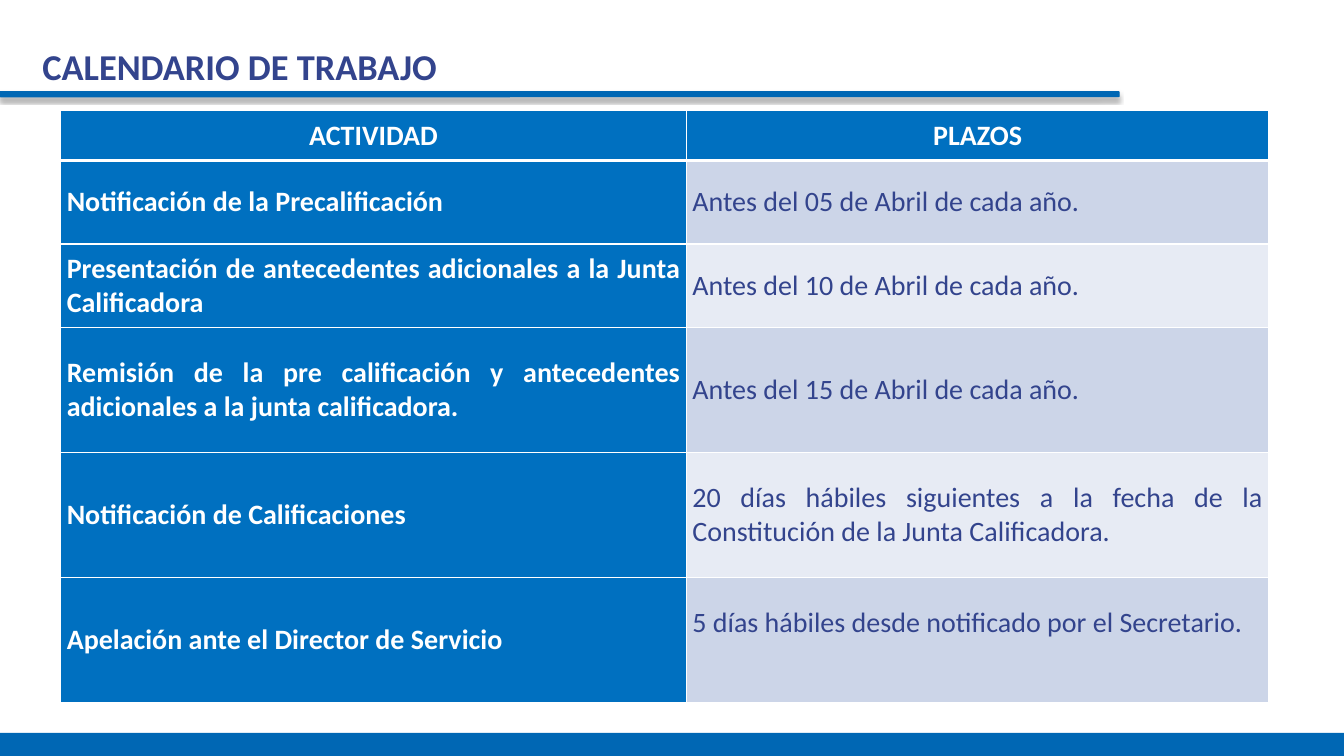
from dataclasses import dataclass

from lxml import etree
from pptx import Presentation
from pptx import util as u
from pptx.dml.color import RGBColor
from pptx.enum import shapes, text
from pptx.oxml import ns


@dataclass(frozen=True)
class Theme:
    font: str = "Calibri"
    title_size: int = 26
    cell_size: int = 20
    bar: str = "0067B4"
    head: str = "0070C0"
    ink: str = "33448D"
    white: str = "FFFFFF"
    bands: tuple = ("CCD5E8", "E7EBF4")


def child(parent, tag, **attributes):
    return etree.SubElement(parent, ns.qn(tag), attributes)


class CalendarSlide:
    """Lengths are percentages of the slide's width (x) and height (y)."""

    def __init__(self, deck, theme):
        self.deck, self.theme = deck, theme
        self.page = deck.slides.add_slide(deck.slide_layouts[5])

    def x(self, share):
        return round(self.deck.slide_width * share / 100)

    def y(self, share):
        return round(self.deck.slide_height * share / 100)

    def frame(self, left, top, width, height):
        return self.x(left), self.y(top), self.x(width), self.y(height)

    def style(self, para, size, color, bold, align):
        para.alignment = align
        font = para.font
        font.name, font.size, font.bold = self.theme.font, u.Pt(size), bold
        font.color.rgb = RGBColor.from_string(color)

    def title(self, words, *area):
        box = self.page.shapes.title
        box.left, box.top, box.width, box.height = self.frame(*area)
        body = box.text_frame
        body.text = words
        body.margin_left = body.margin_right = body.margin_top = body.margin_bottom = 0
        body.vertical_anchor = text.MSO_ANCHOR.MIDDLE
        body.auto_size = text.MSO_AUTO_SIZE.NONE
        self.style(body.paragraphs[0], self.theme.title_size, self.theme.ink,
                   True, text.PP_ALIGN.LEFT)

    def bar(self, kind, *area):
        bar = self.page.shapes.add_shape(kind, *self.frame(*area))
        bar.shadow.inherit = False
        bar.fill.solid()
        bar.fill.fore_color.rgb = RGBColor.from_string(self.theme.bar)
        bar.line.fill.background()
        return bar

    def rule(self, *area):
        rule = self.bar(shapes.MSO_SHAPE.ROUNDED_RECTANGLE, *area)
        rule.adjustments[0] = 0.12
        rule.line.color.rgb = RGBColor.from_string(self.theme.bar)
        rule.line.width = u.Pt(0.75)
        effects = rule._element.spPr.find(ns.qn("a:effectLst"))
        shadow = child(effects, "a:outerShdw", blurRad=str(u.Pt(3.1)),
                       dist=str(u.Pt(1.8)), dir="5400000", rotWithShape="0")
        child(child(shadow, "a:srgbClr", val="000000"), "a:alpha", val="35000")

    def borders(self, cell, top, bottom):
        properties = cell._tc.get_or_add_tcPr()
        for side, points in (("L", 1), ("R", 1), ("T", top), ("B", bottom)):
            line = child(properties, f"a:ln{side}", w=str(u.Pt(points)))
            child(child(line, "a:solidFill"), "a:srgbClr", val=self.theme.white)

    def cell(self, cell, words, fill, color, bold, align):
        cell.text = words
        cell.margin_left = cell.margin_right = u.Inches(0.06)
        cell.margin_top = cell.margin_bottom = 0
        cell.vertical_anchor = text.MSO_ANCHOR.MIDDLE
        cell.fill.solid()
        cell.fill.fore_color.rgb = RGBColor.from_string(fill)
        self.style(cell.text_frame.paragraphs[0], self.theme.cell_size, color, bold, align)

    def table(self, rows, left, top, widths, heights):
        theme, align = self.theme, text.PP_ALIGN
        holder = self.page.shapes.add_table(
            len(rows), len(widths), *self.frame(left, top, sum(widths), sum(heights)))
        table = holder.table
        for column, width in zip(table.columns, widths):
            column.width = self.x(width)
        for r, (row, height) in enumerate(zip(rows, heights)):
            table.rows[r].height = self.y(height)
            for c, words in enumerate(row):
                cell = table.cell(r, c)
                self.borders(cell, top=3 if r == 1 else 1, bottom=3 if r == 0 else 1)
                if r == 0 or c == 0:
                    self.cell(cell, words, theme.head, theme.white, True,
                              align.JUSTIFY if r else align.CENTER)
                else:
                    self.cell(cell, words, theme.bands[(r - 1) % 2], theme.ink, False,
                              align.JUSTIFY)
        return table


ROWS = [
    ("ACTIVIDAD", "PLAZOS"),
    ("Notificación de la Precalificación", "Antes del 05 de Abril de cada año."),
    ("Presentación de antecedentes adicionales a la Junta Calificadora",
     "Antes del 10 de Abril de cada año."),
    ("Remisión de la pre calificación y antecedentes adicionales a la junta calificadora.",
     "Antes del 15 de Abril de cada año."),
    ("Notificación de Calificaciones",
     "20 días hábiles siguientes a la fecha de la Constitución de la Junta Calificadora."),
    ("Apelación ante el Director de Servicio",
     "5 días hábiles desde notificado por el Secretario."),
]


def main():
    deck = Presentation()
    deck.slide_width, deck.slide_height = u.Inches(13.33), u.Inches(7.5)
    slide = CalendarSlide(deck, Theme())

    # Heading and bars
    slide.title("CALENDARIO DE TRABAJO", 3.15, 5.73, 95, 5.87)
    slide.rule(0, 12.13, 83.27, 0.67)
    slide.bar(shapes.MSO_SHAPE.RECTANGLE, 0, 96.93, 100, 3.07)

    # Calendar: low rows, then rows half as high again
    low = 11.04
    table = slide.table(ROWS, 4.52, 14.6, widths=(46.55, 43.35),
                        heights=[6.64] + [low] * 2 + [low * 1.5] * 3)
    # The last deadline sits one line higher
    table.cell(5, 1).margin_bottom = u.Inches(0.34)

    deck.save("out.pptx")


if __name__ == "__main__":
    main()
